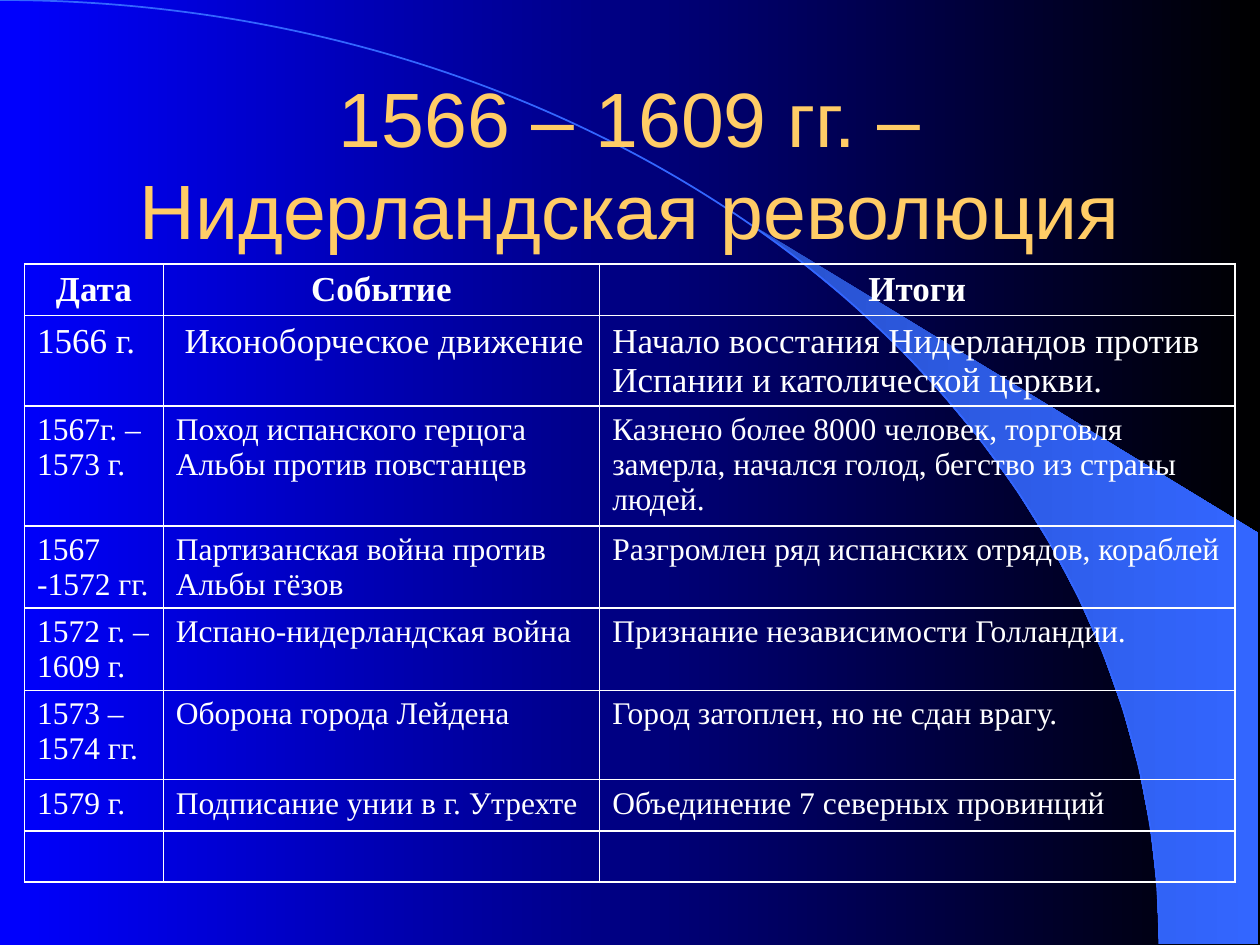
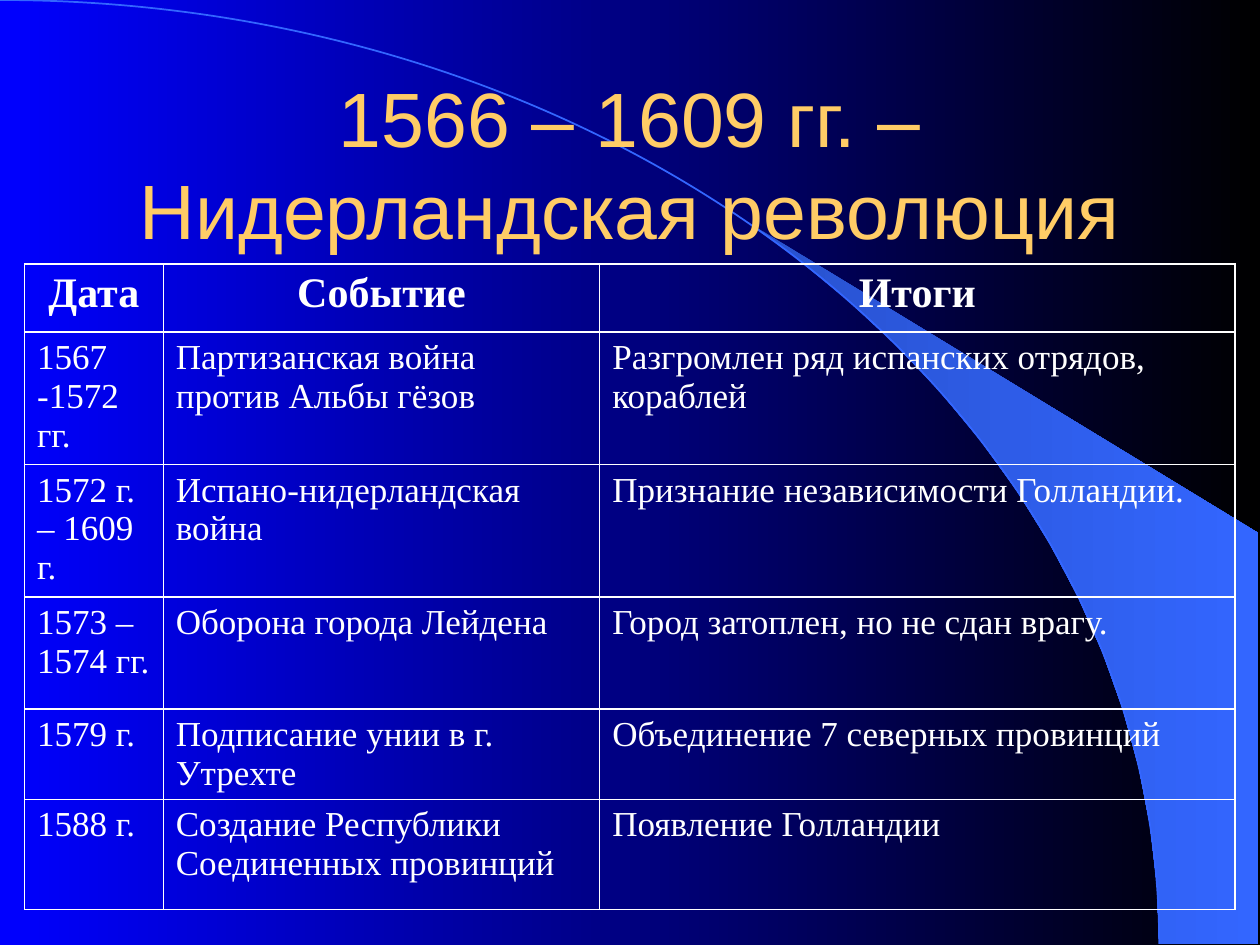
from collections import namedtuple
from math import asin, cos, pi, sin

from lxml.etree import SubElement
from pptx import Presentation
from pptx.dml.color import RGBColor
from pptx.enum.text import MSO_ANCHOR, PP_ALIGN
from pptx.oxml.ns import qn
from pptx.util import Pt

Box = namedtuple("Box", "left top width height")

PAGE = Box(0, 0, 720, 540)
ARC_BOX = Box(0, 0, 662.4, 539.3)
TITLE_BOX = Box(54, 47.8, 612, 90)
TABLE_LEFT, TABLE_TOP = 14, 150.9
COLUMN_WIDTHS = (79.3, 249.4, 363)

BLUE = RGBColor(0x00, 0x00, 0xFF)
BLACK = RGBColor(0x00, 0x00, 0x00)
DEEP_SKY = RGBColor(0x28, 0x51, 0xCC)
SKY = RGBColor(0x33, 0x66, 0xFF)
GOLD = RGBColor(0xFF, 0xCC, 0x66)
WHITE = RGBColor(0xFF, 0xFF, 0xFF)
TITLE_FONT, TABLE_FONT = "Arial", "Times New Roman"
PLAIN_TABLE_STYLE = "{2D5ABB26-0587-4C30-8999-92F81FD0307C}"
CURVE_PULL = 0.5523  # Bezier handle length for a quarter ellipse

TITLE = "1566 – 1609 гг. – Нидерландская революция"
HEADINGS = ("Дата", "Событие", "Итоги")
SHARED_EVENTS = [
    ("1567 -1572 гг.", "Партизанская война против Альбы гёзов",
     "Разгромлен ряд испанских отрядов, кораблей"),
    ("1572 г. – 1609 г.", "Испано-нидерландская война",
     "Признание независимости Голландии."),
    ("1573 – 1574 гг.", "Оборона города Лейдена",
     "Город затоплен, но не сдан врагу."),
    ("1579 г.", "Подписание унии в г. Утрехте",
     "Объединение 7 северных провинций"),
]
FIRST_EVENTS = [
    ("1566 г.", " Иконоборческое движение",
     "Начало восстания Нидерландов против Испании и католической церкви."),
    ("1567г. – 1573 г.", "Поход испанского герцога Альбы против повстанцев",
     "Казнено более 8000 человек, торговля замерла, начался голод, "
     "бегство из страны людей."),
]
LAST_EVENT = ("1588 г.", "Создание Республики Соединенных провинций",
              "Появление Голландии")

# Each chronicle: rows, row heights, font size of each row
CHRONICLES = [
    ([HEADINGS, *FIRST_EVENTS, *SHARED_EVENTS, ("", "", "")],
     (29.5, 51.5, 67, 47, 47, 51.1, 29.3, 29.3),
     (20, 20, 18, 18, 18, 18, 18, 18)),
    ([HEADINGS, *SHARED_EVENTS, LAST_EVENT],
     (38.9, 73.7, 73.7, 64, 51.4, 62.9),
     (24, 20, 20, 20, 20, 20)),
]


def set_gradient(fill, start, end):
    fill.gradient()
    fill.gradient_angle = 0
    for stop, color in zip(fill.gradient_stops, (start, end)):
        stop.color.rgb = color


def style_runs(paragraph, font_name, size, color, bold=False):
    for run in paragraph.runs:
        run.font.name = font_name
        run.font.size = Pt(size)
        run.font.color.rgb = color
        run.font.bold = bold


def set_other_scripts(paragraph, font_name, size):
    """Give the runs' other scripts and the paragraph end the same font."""
    ending = SubElement(paragraph._p, qn("a:endParaRPr"), sz=str(size * 100))
    SubElement(ending, qn("a:latin"), typeface=font_name)
    for properties in [r._r.get_or_add_rPr() for r in paragraph.runs] + [ending]:
        for script in ("a:ea", "a:cs"):
            SubElement(properties, qn(script), typeface=font_name)


def arc_points(box, start_angle, steps):
    """Points on the quarter ellipse from start_angle to the box's bottom right."""
    angles = [start_angle + (pi / 2 - start_angle) * i / steps
              for i in range(steps + 1)]
    return [(Pt(box.left + box.width * sin(a)),
             Pt(box.top + box.height * (1 - cos(a)))) for a in angles]


def add_outline(slide, points, close):
    builder = slide.shapes.build_freeform(*points[0], scale=1.0)
    builder.add_line_segments(points[1:], close=close)
    outline = builder.convert_to_shape()
    outline.shadow.inherit = False
    return outline


def bend_to_quarter_ellipse(outline):
    """Turn the outline's only segment into a curve that leaves level and lands upright."""
    width, height = outline.width, outline.height
    segment = next(outline._element.iter(qn("a:lnTo")))
    curve = SubElement(segment.getparent(), qn("a:cubicBezTo"))
    for x, y in ((width * CURVE_PULL, 0),
                 (width, height * (1 - CURVE_PULL)),
                 (width, height)):
        SubElement(curve, qn("a:pt"), x=str(round(x)), y=str(round(y)))
    segment.getparent().replace(segment, curve)


def add_backdrop(slide, page, arc_box):
    set_gradient(slide.background.fill, BLUE, BLACK)

    right = Pt(page.left + page.width - 1)
    inner_edge = arc_points(arc_box, asin(0.64), steps=14)
    corners = [(right, Pt(arc_box.top + arc_box.height)),
               (right, Pt(page.top + 304.6))]
    crescent = add_outline(slide, inner_edge + corners, close=True)
    set_gradient(crescent.fill, DEEP_SKY, SKY)
    crescent.line.fill.background()

    arc = add_outline(slide, arc_points(arc_box, 0, steps=1), close=False)
    bend_to_quarter_ellipse(arc)
    arc.fill.background()
    arc.line.color.rgb = SKY
    arc.line.width = Pt(1)


def add_title(slide, box):
    frame = slide.shapes.add_textbox(*map(Pt, box)).text_frame
    frame.word_wrap = True
    frame.vertical_anchor = MSO_ANCHOR.MIDDLE
    frame.text = TITLE
    heading = frame.paragraphs[0]
    heading.alignment = PP_ALIGN.CENTER
    style_runs(heading, TITLE_FONT, 44, GOLD)


def set_borders(cell, color, width):
    properties = cell._tc.get_or_add_tcPr()
    for side in ("a:lnL", "a:lnR", "a:lnT", "a:lnB"):
        border = SubElement(properties, qn(side), w=str(Pt(width)))
        fill = SubElement(border, qn("a:solidFill"))
        SubElement(fill, qn("a:srgbClr"), val=str(color))


def add_chronicle(slide, box, rows, heights, sizes):
    table = slide.shapes.add_table(
        len(rows), len(COLUMN_WIDTHS), *map(Pt, box)).table
    table.first_row = table.horz_banding = False
    next(table._tbl.iter(qn("a:tableStyleId"))).text = PLAIN_TABLE_STYLE
    for column, width in zip(table.columns, COLUMN_WIDTHS):
        column.width = Pt(width)
    for r, (texts, height, size) in enumerate(zip(rows, heights, sizes)):
        table.rows[r].height = Pt(height)
        for c, text in enumerate(texts):
            cell = table.cell(r, c)
            set_borders(cell, WHITE, 1)
            cell.fill.background()
            cell.margin_bottom = 0
            cell.text_frame.text = text
            entry = cell.text_frame.paragraphs[0]
            if r == 0:
                entry.alignment = PP_ALIGN.CENTER
            style_runs(entry, TABLE_FONT, size, WHITE, bold=r == 0)
            set_other_scripts(entry, TABLE_FONT, size)


def main():
    prs = Presentation()
    prs.slide_width, prs.slide_height = Pt(PAGE.width), Pt(PAGE.height)
    for rows, heights, sizes in CHRONICLES:
        slide = prs.slides.add_slide(prs.slide_layouts[6])
        add_backdrop(slide, PAGE, ARC_BOX)
        add_title(slide, TITLE_BOX)
        table_box = Box(TABLE_LEFT, TABLE_TOP, sum(COLUMN_WIDTHS), sum(heights))
        add_chronicle(slide, table_box, rows, heights, sizes)
    prs.save("out.pptx")


if __name__ == "__main__":
    main()
